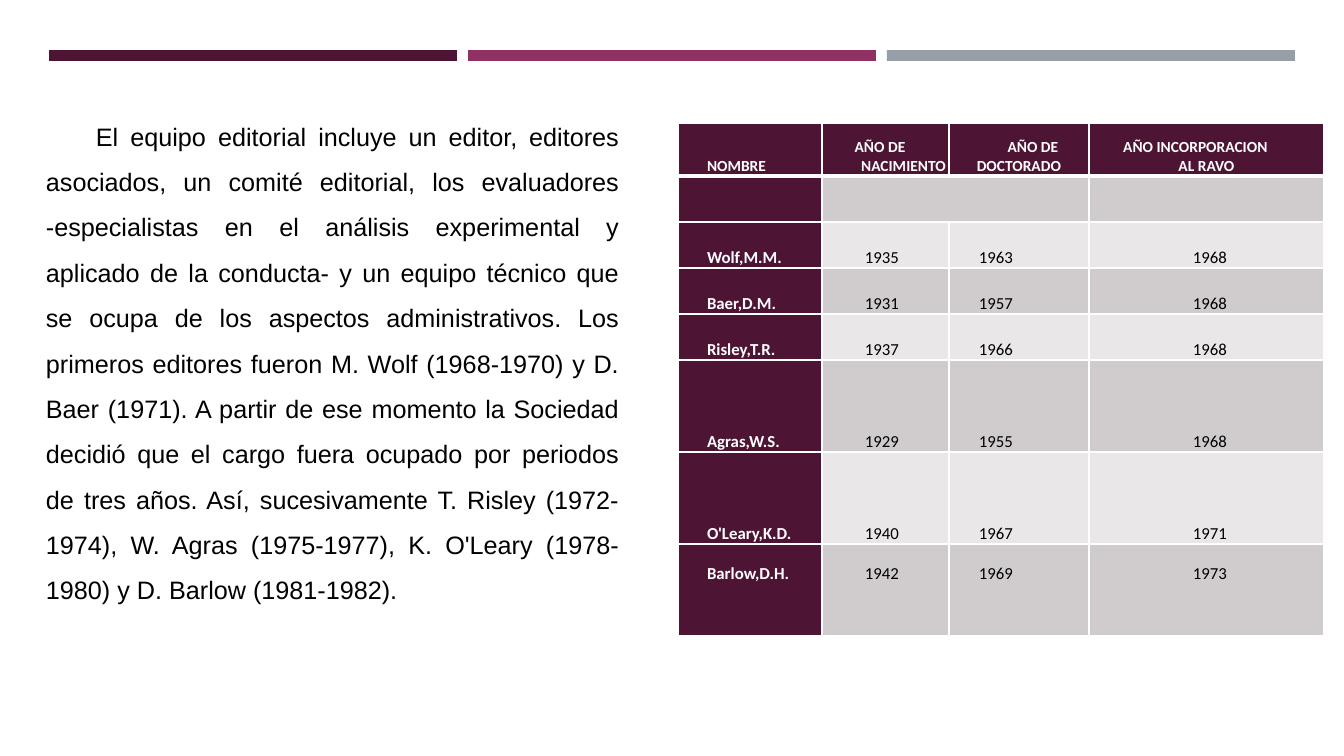
from lxml.etree import SubElement
from pptx import Presentation
from pptx.dml.color import RGBColor
from pptx.enum.shapes import MSO_SHAPE
from pptx.enum.text import MSO_ANCHOR, PP_ALIGN
from pptx.oxml.ns import qn
from pptx.util import Pt

# Content
BODY = (
    "El equipo editorial incluye un editor, editores asociados, un comité editorial, "
    "los evaluadores -especialistas en el análisis experimental y aplicado de la conducta- "
    "y un equipo técnico que se ocupa de los aspectos administrativos. Los primeros editores "
    "fueron M. Wolf (1968-1970) y D. Baer (1971). A partir de ese momento la Sociedad decidió "
    "que el cargo fuera ocupado por periodos de tres años. Así, sucesivamente T. Risley "
    "(1972-1974), W. Agras (1975-1977), K. O'Leary (1978-1980) y D. Barlow (1981-1982)."
)
# Each header line carries its own left indent and right margin in px
HEADERS = [
    [("NOMBRE", 28, 0)],
    [("AÑO DE", 0, 11), ("NACIMIENTO", 36, 0)],
    [("AÑO DE", 28, 0), ("DOCTORADO", 0, 0)],
    [("AÑO INCORPORACION", 0, 22), ("AL RAVO", 0, 0)],
]
EDITORS = [
    ("Wolf,M.M.", "1935", "1963", "1968"),
    ("Baer,D.M.", "1931", "1957", "1968"),
    ("Risley,T.R.", "1937", "1966", "1968"),
    ("Agras,W.S.", "1929", "1955", "1968"),
    ("O'Leary,K.D.", "1940", "1967", "1971"),
    ("Barlow,D.H.", "1942", "1969", "1973"),
]

THEME = {
    "plum": "4D1434", "magenta": "903163", "gray": "969FA7",
    "band_dark": "D0CCCE", "band_light": "E9E7E8",
    "white": "FFFFFF", "black": "000000",
    "body_font": "Arial", "table_font": "Calibri",
    "body_size": 18, "header_size": 11, "cell_size": 12,
}

# Layout in px
SLIDE = (1344, 756)
BAR_LEFT, BAR_TOP, BAR_WIDTH, BAR_HEIGHT, BAR_STEP = 49, 50, 408, 11, 419
BODY_BOX = (36, 101, 593, 554)
BODY_INDENT = 50
TABLE_ORIGIN = (678, 123)
COLUMNS = [144, 127, 140, 235]
ROWS = [53, 46, 46, 46, 46, 92, 92, 92]
CELL_INDENTS = [28, 42, 29, 103]
LAST_ROW_TOP = 20


def px(value):
    return round(value * 914400 / 100.8)


def color(name):
    return RGBColor.from_string(THEME[name])


def set_values(target, values):
    for name, value in values.items():
        setattr(target, name, value)


def write(paragraph, text, indent, alignment, font, size, ink, bold=False, right=0):
    run = paragraph.add_run()
    run.text = text
    paragraph.alignment = alignment
    properties = paragraph._p.get_or_add_pPr()
    for name, value in {"marL": 0, "marR": right, "indent": indent}.items():
        properties.set(name, str(px(value)))
    set_values(run.font, {"name": THEME[font], "size": Pt(THEME[size]), "bold": bold})
    run.font.color.rgb = color(ink)


def format_cell(cell, fill, borders):
    cell.fill.solid()
    cell.fill.fore_color.rgb = color(fill)
    properties = cell._tc.get_or_add_tcPr()
    for position, (side, width) in enumerate(borders.items()):
        line = SubElement(properties, qn(f"a:ln{side}"), w=str(Pt(width)))
        solid = SubElement(line, qn("a:solidFill"))
        SubElement(solid, qn("a:srgbClr"), val=THEME["white"])
        properties.insert(position, line)


def add_bars(slide):
    for index, name in enumerate(("plum", "magenta", "gray")):
        left = BAR_LEFT + index * BAR_STEP
        bar = slide.shapes.add_shape(
            MSO_SHAPE.RECTANGLE, px(left), px(BAR_TOP), px(BAR_WIDTH), px(BAR_HEIGHT))
        bar.shadow.inherit = False
        bar.fill.solid()
        bar.fill.fore_color.rgb = color(name)
        bar.line.fill.background()


def add_body(slide):
    frame = slide.shapes.add_textbox(*map(px, BODY_BOX)).text_frame
    frame.word_wrap = True
    paragraph = frame.paragraphs[0]
    paragraph.line_spacing = 1.5
    write(paragraph, BODY, BODY_INDENT, PP_ALIGN.JUSTIFY, "body_font", "body_size", "black")


def add_editors_table(slide):
    table = slide.shapes.add_table(
        len(ROWS), len(COLUMNS), *map(px, (*TABLE_ORIGIN, sum(COLUMNS), sum(ROWS)))).table
    set_values(table, {"first_row": False, "horz_banding": False})
    for column, width in zip(table.columns, COLUMNS):
        column.width = px(width)
    for row, height in zip(table.rows, ROWS):
        row.height = px(height)

    # Fills and rules
    last = len(ROWS) - 1
    for r in range(len(ROWS)):
        band = "band_dark" if r % 2 else "band_light"
        borders = {"L": 1, "R": 1, "T": 3 if r == 1 else 1, "B": 3 if r == 0 else 1}
        for c in range(len(COLUMNS)):
            cell = table.cell(r, c)
            format_cell(cell, "plum" if r == 0 or c == 0 else band, borders)
            if r != 1:
                set_values(cell, {
                    "margin_left": px(1), "margin_right": px(1), "margin_bottom": 0,
                    "margin_top": px(LAST_ROW_TOP) if r == last else 0,
                    "vertical_anchor": MSO_ANCHOR.TOP if r == last else MSO_ANCHOR.BOTTOM,
                })
    table.cell(1, 1).merge(table.cell(1, 2))

    # Header text
    for c, lines in enumerate(HEADERS):
        frame = table.cell(0, c).text_frame
        for index, (text, indent, right) in enumerate(lines):
            paragraph = frame.add_paragraph() if index else frame.paragraphs[0]
            write(paragraph, text, indent, PP_ALIGN.CENTER if c else PP_ALIGN.LEFT,
                  "table_font", "header_size", "white", True, right)

    # Editors and years
    for r, editor in enumerate(EDITORS, start=2):
        for c, text in enumerate(editor):
            write(table.cell(r, c).text_frame.paragraphs[0], text, CELL_INDENTS[c],
                  PP_ALIGN.LEFT, "table_font", "cell_size",
                  "black" if c else "white", c == 0)


def main():
    presentation = Presentation()
    set_values(presentation, {"slide_width": px(SLIDE[0]), "slide_height": px(SLIDE[1])})
    slide = presentation.slides.add_slide(presentation.slide_layouts[6])
    add_bars(slide)
    add_body(slide)
    add_editors_table(slide)
    presentation.save("out.pptx")


if __name__ == "__main__":
    main()
